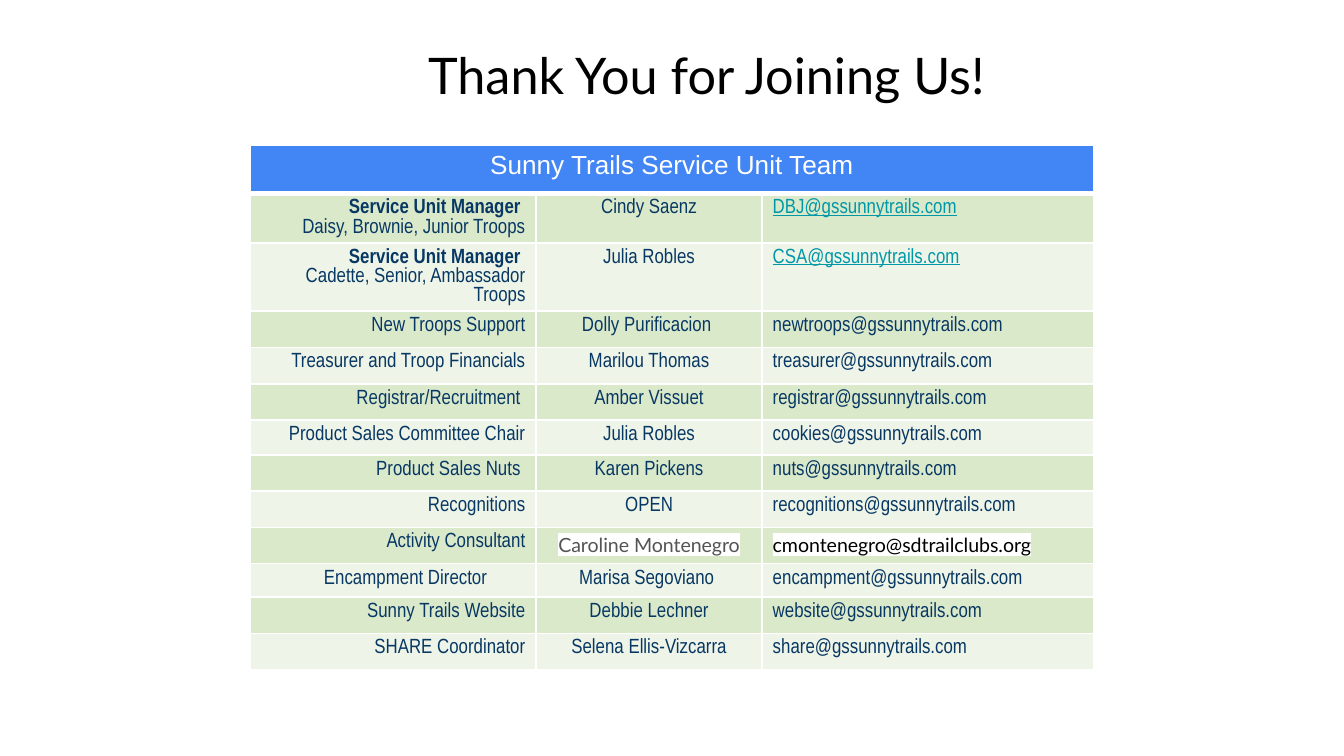
"""Build the closing slide with the service unit team contact table."""
from lxml import etree
from pptx import Presentation
from pptx import util as u
from pptx.dml.color import RGBColor
from pptx.enum import text
from pptx.oxml.ns import qn

COLORS = {
    "white": "FFFFFF", "black": "000000", "header": "4285F4", "navy": "073763",
    "link": "0097A7", "gray": "545454", "green": "DBE9CB", "pale": "EEF4E7",
}
LEFT, CENTER, RIGHT = text.PP_ALIGN.LEFT, text.PP_ALIGN.CENTER, text.PP_ALIGN.RIGHT
DOMAIN = "@gssunnytrails.com"
TEAM = [
    ("Service Unit Manager |Daisy, Brownie, Junior Troops", "Cindy Saenz", "DBJ" + DOMAIN),
    ("Service Unit Manager |Cadette, Senior, Ambassador Troops", "Julia Robles", "CSA" + DOMAIN),
    ("New Troops Support", "Dolly Purificacion ", "newtroops" + DOMAIN),
    ("Treasurer and Troop Financials", "Marilou Thomas", "treasurer" + DOMAIN),
    ("Registrar/Recruitment ", "Amber Vissuet", "registrar" + DOMAIN),
    ("Product Sales Committee Chair", "Julia Robles", "cookies" + DOMAIN),
    ("Product Sales Nuts ", "Karen Pickens", "nuts" + DOMAIN),
    ("Recognitions", "OPEN", "recognitions" + DOMAIN),
    ("Activity Consultant", "Caroline Montenegro", "cmontenegro@sdtrailclubs.org"),
    ("Encampment Director\t", "Marisa Segoviano ", "encampment" + DOMAIN),
    ("Sunny Trails Website", "Debbie Lechner", "website" + DOMAIN),
    ("SHARE Coordinator", "Selena Ellis-Vizcarra", "share" + DOMAIN),
]
COLUMN_WIDTHS = [2.13, 1.68, 2.47]
ROW_HEIGHTS = [0.36] + [0.27] * 5 + [0.26] + [0.27] * 3 + [0.25] + [0.27] * 2


def add_run(paragraph, words, size, font, color, align, bold=False):
    paragraph.alignment = align
    run = paragraph.add_run()
    run.text = words
    run.font.size = u.Pt(size)
    run.font.name = font
    run.font.bold = bold
    run.font.color.rgb = RGBColor.from_string(COLORS[color])
    return run


def style_cell(cell, fill, top=1, bottom=1):
    cell.margin_left = cell.margin_right = u.Inches(0.08)
    cell.margin_top = cell.margin_bottom = u.Inches(0.04)
    properties = cell._tc.get_or_add_tcPr()
    for side, points in zip("LRTB", (1, 1, top, bottom)):
        line = etree.SubElement(properties, qn(f"a:ln{side}"), w=str(u.Pt(points)))
        solid = etree.SubElement(line, qn("a:solidFill"))
        etree.SubElement(solid, qn("a:srgbClr"), val=COLORS["white"])
    cell.fill.solid()
    cell.fill.fore_color.rgb = RGBColor.from_string(COLORS[fill])


presentation = Presentation()
presentation.slide_width = u.Inches(10)
presentation.slide_height = presentation.slide_width * 9 // 16
slide = presentation.slides.add_slide(presentation.slide_layouts[6])

table = slide.shapes.add_table(
    len(ROW_HEIGHTS), len(COLUMN_WIDTHS), u.Inches(1.86), u.Inches(1.08),
    u.Inches(sum(COLUMN_WIDTHS)), u.Inches(sum(ROW_HEIGHTS)),
).table
for column, width in zip(table.columns, COLUMN_WIDTHS):
    column.width = u.Inches(width)
for row, height in zip(table.rows, ROW_HEIGHTS):
    row.height = u.Inches(height)

table.cell(0, 0).merge(table.cell(0, 2))
for cell in table.rows[0].cells:
    style_cell(cell, "header", bottom=3)
add_run(table.cell(0, 0).text_frame.paragraphs[0], "Sunny Trails Service Unit Team",
        14, "Arial", "white", CENTER)

for row_number, member in enumerate(TEAM, 1):
    for column_number, (words, align) in enumerate(zip(member, (RIGHT, CENTER, LEFT))):
        cell = table.cell(row_number, column_number)
        style_cell(cell, "green" if row_number % 2 else "pale", top=3 if row_number == 1 else 1)
        lines = words.split("|")
        highlighted = member[0] == "Activity Consultant" and column_number > 0
        linked = row_number <= 2 and column_number == 2
        for line_number, line in enumerate(lines):
            frame = cell.text_frame
            paragraph = frame.add_paragraph() if line_number else frame.paragraphs[0]
            if highlighted:
                color = "gray" if column_number == 1 else "black"
                run = add_run(paragraph, line, 10.5, "Lato", color, align)
                highlight = etree.Element(qn("a:highlight"))
                etree.SubElement(highlight, qn("a:srgbClr"), val=COLORS["white"])
                run.font._element.find(qn("a:solidFill")).addnext(highlight)
            else:
                run = add_run(paragraph, line, 11, "Arial Narrow", "link" if linked else "navy",
                              align, bold=len(lines) > 1 and line_number == 0)
                if linked:
                    run.font.underline = True

title = slide.shapes.add_textbox(u.Inches(0.76), u.Inches(0.29), u.Inches(8.99), u.Inches(0.62))
title.text_frame.word_wrap = True
title.text_frame.vertical_anchor = text.MSO_ANCHOR.TOP
title.text_frame.margin_left = title.text_frame.margin_right = u.Inches(0.07)
title.text_frame.margin_top = title.text_frame.margin_bottom = u.Inches(0.04)
add_run(title.text_frame.paragraphs[0], "Thank You for Joining Us!", 27, "Lato", "black", CENTER)

presentation.save("out.pptx")
